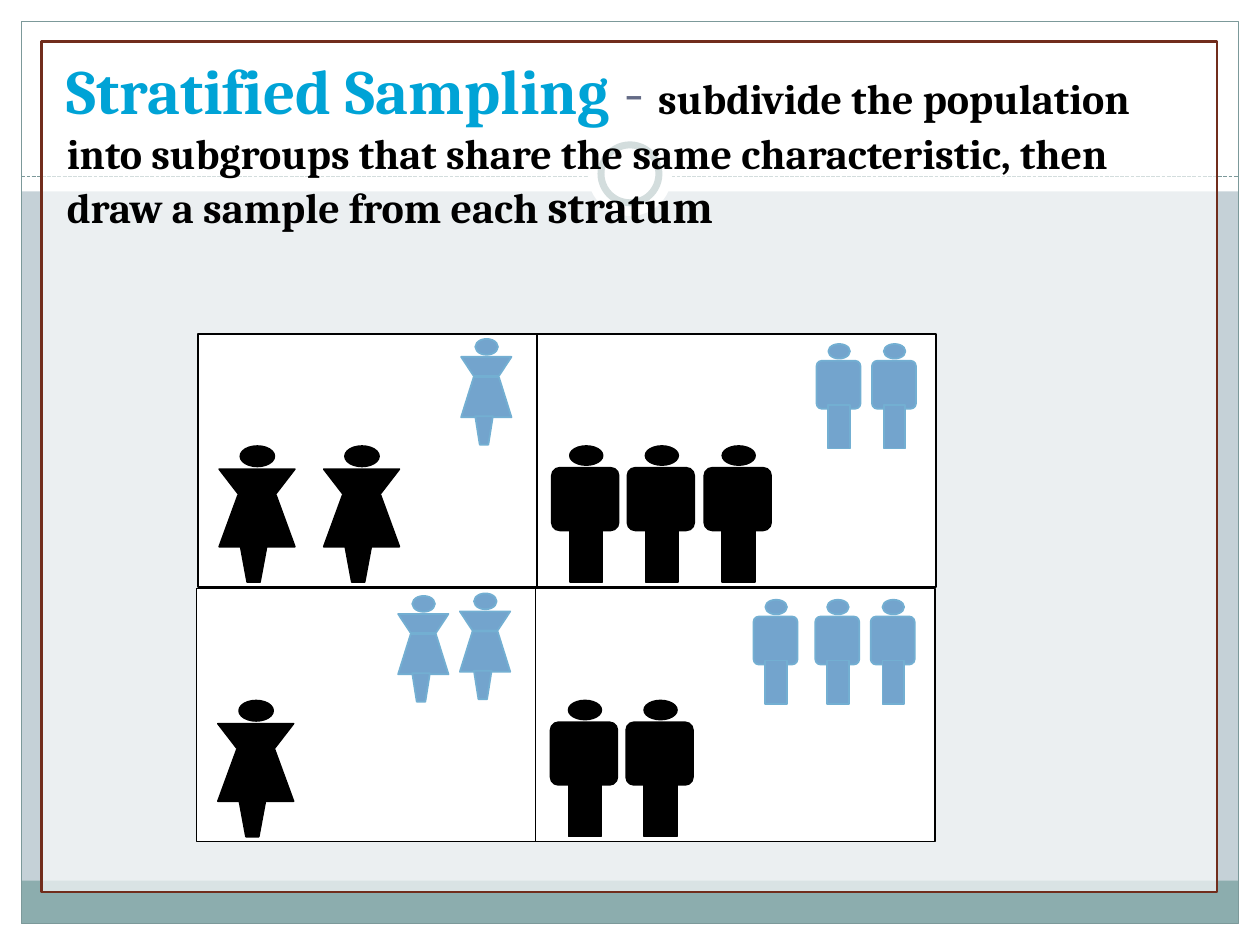
from dataclasses import dataclass
from lxml import etree
from pptx import Presentation
from pptx.dml.color import RGBColor
from pptx.enum.dml import MSO_LINE
from pptx.enum.shapes import MSO_CONNECTOR, MSO_SHAPE
from pptx.enum.text import MSO_ANCHOR, MSO_AUTO_SIZE, PP_ALIGN
from pptx.oxml.ns import qn
from pptx.util import Inches, Pt

RECT, OVAL, ROUND = MSO_SHAPE.RECTANGLE, MSO_SHAPE.OVAL, MSO_SHAPE.ROUNDED_RECTANGLE
STRAIGHT, DASH = MSO_CONNECTOR.STRAIGHT, MSO_LINE.SQUARE_DOT
LEFT, TOP, NO_FIT = PP_ALIGN.LEFT, MSO_ANCHOR.TOP, MSO_AUTO_SIZE.NONE


@dataclass(frozen=True)
class Theme:
    font: str = "Cambria"
    back: str = "C5D1D7"
    white: str = "FFFFFF"
    black: str = "000000"
    band: str = "8CADAE"
    rule: str = "7C999A"
    frame: str = "712D1C"
    title: str = "00A3D6"
    dash: str = "646B86"
    pale: str = "73A4CD"
    pale_line: str = "73AFD2"
    big: int = 36
    mid: int = 26
    small: int = 24


T = Theme()
W, H, EDGE = 10, 7.5, 0.17

TITLE = [
    ("Stratified Sampling ", T.big, T.title, True),
    ("- ", T.big, T.dash, False),
    ("subdivide the population into subgroups that share the same characteristic, "
     "then draw a sample from each ", T.small, T.black, True),
    ("stratum", T.mid, T.black, True),
]

MARGINS = [(0, H - EDGE, W, EDGE), (0, 0, W, 1.52), (0, 0, EDGE, H), (W - EDGE, 0, EDGE, H)]

PANEL_X, PANEL_Y, PANEL_W, PANEL_H, SPLIT = 1.56, 2.65, 5.86, 2.01, 2.69
ROW_STEP = 2.02
SIZES = {
    ("woman", "adult"): (0.6, 1.08),
    ("woman", "child"): (0.4, 0.84),
    ("man", "adult"): (0.53, 1.08),
    ("man", "child"): (0.35, 0.83),
}
ADULT_TOP = 0.89
ROWS = [
    [("woman", "adult", ADULT_TOP, [0.17, 1.0]),
     ("woman", "child", 0.04, [2.09]),
     ("man", "adult", ADULT_TOP, [2.81, 3.41, 4.02]),
     ("man", "child", 0.08, [4.91, 5.35])],
    [("woman", "adult", ADULT_TOP, [0.17]),
     ("woman", "child", 0.06, [1.6]),
     ("woman", "child", 0.04, [2.09]),
     ("man", "adult", ADULT_TOP, [2.81, 3.41]),
     ("man", "child", 0.09, [4.42, 4.91, 5.35])],
]

PRESETS = {
    "woman": [(OVAL, 0.28, 0, 0.45, 0.15)],
    "man": [(ROUND, 0, 0.16, 1, 0.46), (OVAL, 0.27, 0, 0.49, 0.14), (RECT, 0.27, 0.58, 0.49, 0.42)],
}
OUTLINES = {
    "woman": [
        [(0, 0.17), (1, 0.17), (0.75, 0.35), (0.25, 0.35)],
        [(0.25, 0.36), (0.75, 0.36), (1, 0.74), (0, 0.74)],
        [(0.28, 0.73), (0.63, 0.73), (0.54, 1), (0.37, 1)],
    ],
    "man": [],
}


def rgb(color):
    return RGBColor.from_string(color)


def paint(sp, fill=None, line=None, width=1):
    sp.shadow.inherit = False
    if fill:
        sp.fill.solid()
        sp.fill.fore_color.rgb = rgb(fill)
    else:
        sp.fill.background()
    if line:
        sp.line.color.rgb = rgb(line)
        sp.line.width = Pt(width)
    else:
        sp.line.fill.background()
    return sp


def shape(shapes, kind, box, *style):
    return paint(shapes.add_shape(kind, *map(Inches, box)), *style)


def rule(shapes, x1, y1, x2, y2, color, width):
    ln = shapes.add_connector(STRAIGHT, *map(Inches, (x1, y1, x2, y2)))
    ln.line.color.rgb = rgb(color)
    ln.line.width = Pt(width)
    etree.SubElement(ln._element.spPr, qn("a:effectLst"))
    return ln


def person(s, who, age, x, y):
    w, h = SIZES[who, age]
    style = (T.black, T.black) if age == "adult" else (T.pale, T.pale_line)
    shapes = s.shapes.add_group_shape().shapes
    for outline in OUTLINES[who]:
        pts = [(Inches(x + u * w), Inches(y + v * h)) for u, v in outline]
        fb = shapes.build_freeform(*pts[0])
        fb.add_line_segments(pts[1:], close=True)
        paint(fb.convert_to_shape(), *style)
    for kind, u, v, du, dv in PRESETS[who]:
        sp = shape(shapes, kind, (x + u * w, y + v * h, du * w, dv * h), *style)
        if kind == ROUND:
            sp.adjustments[0] = 0.125


def backdrop(s):
    s.background.fill.solid()
    s.background.fill.fore_color.rgb = rgb(T.back)
    for box in MARGINS:
        shape(s.shapes, RECT, box, T.white)
    inner = W - 2 * EDGE
    shape(s.shapes, RECT, (EDGE, 6.99, inner, 0.34), T.band)
    shape(s.shapes, RECT, (EDGE, EDGE, inner, H - 2 * EDGE), None, T.rule, 0.75)
    rule(s.shapes, EDGE, 1.4, W - EDGE, 1.4, T.rule, 0.75).line.dash_style = DASH
    for d, line in ((0.67, None), (0.46, T.rule)):
        shape(s.shapes, OVAL, ((W - d) / 2, 1.38 - d / 2, d, d), T.white, line, 4)
    card = shape(s.shapes, RECT, (0.33, 0.33, 9.33, 6.75), T.white, T.frame, 1.5)
    color = card._element.spPr.find(qn("a:solidFill"))[0]
    etree.SubElement(color, qn("a:alpha"), val="67000")


def panels(s):
    for i, row in enumerate(ROWS):
        x, y = PANEL_X + 0.01 * (1 - i), PANEL_Y + i * ROW_STEP
        shape(s.shapes, RECT, (x, y, PANEL_W, PANEL_H), T.white, T.black)
        rule(s.shapes, x + SPLIT, y, x + SPLIT, y + PANEL_H, T.black, 1)
        for who, age, dy, columns in row:
            for dx in columns:
                person(s, who, age, x + dx, y + dy)


def heading(s):
    sp = s.shapes.title
    sp.left, sp.top, sp.width, sp.height = map(Inches, (0.43, 0.36, 9.15, 1.55))
    tf = sp.text_frame
    tf.word_wrap, tf.auto_size, tf.vertical_anchor = True, NO_FIT, TOP
    p = tf.paragraphs[0]
    p.alignment = LEFT
    for text, size, color, bold in TITLE:
        r = p.add_run()
        r.text = text
        r.font.name, r.font.size, r.font.bold = T.font, Pt(size), bold
        r.font.color.rgb = rgb(color)
    s.shapes._spTree.append(sp._element)


def main():
    prs = Presentation()
    prs.slide_width, prs.slide_height = Inches(W), Inches(H)
    s = prs.slides.add_slide(prs.slide_layouts[5])
    backdrop(s)
    panels(s)
    heading(s)
    prs.save("out.pptx")


if __name__ == "__main__":
    main()
